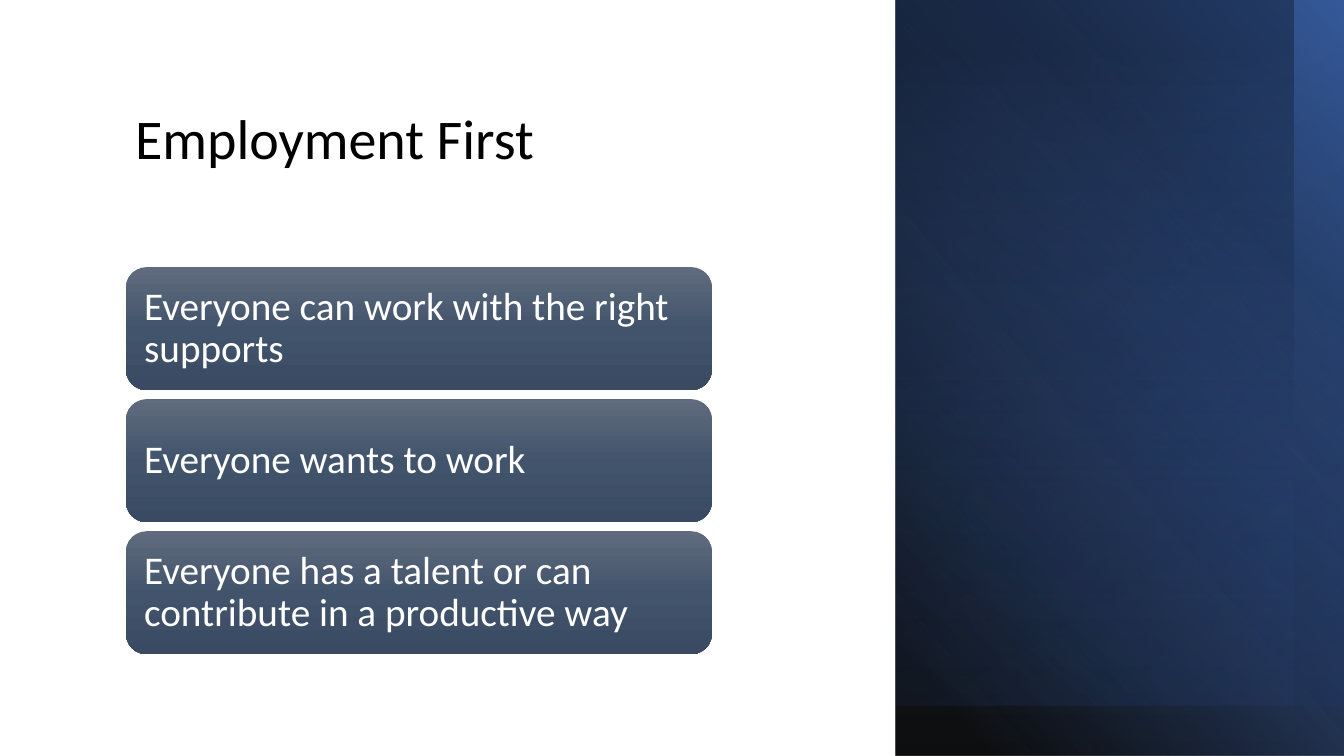
from lxml import etree
from pptx import Presentation
from pptx.dml.color import RGBColor
from pptx.enum import shapes, text
from pptx.oxml.ns import qn
from pptx.util import Inches, Pt

FONT = "Calibri"
PRINCIPLES = [
    "Everyone can work with the right supports",
    "Everyone wants to work",
    "Everyone has a talent or can contribute in a productive way",
]
# Stops are (position %, colour, opacity %)
CARD_STOPS = [(0, "606B7D", 100), (50, "42546C", 100), (100, "394A62", 100)]
# Panel layers are (width, height, clockwise angle, stops), back to front
PANEL_LAYERS = [
    (4.45, 7.5, 40, [(8, "000000", 94), (100, "4472C4", 100)]),
    (4.45, 7, 300, [(31, "203864", 0), (100, "203864", 26)]),
    (4.45, 7, 50, [(0, "4472C4", 0), (72, "000000", 21)]),
    (3.95, 7.5, 90, [(0, "4472C4", 0), (93, "000000", 29)]),
]


def color(value):
    return RGBColor.from_string(value)


def fill_gradient(shape, stops, angle):
    shape.fill.gradient()
    shape.fill.gradient_angle = (360 - angle) % 360
    stop_list = shape._element.spPr.find(qn("a:gradFill")).find(qn("a:gsLst"))
    for stop in list(stop_list):
        stop_list.remove(stop)
    for position, value, opacity in stops:
        stop = etree.SubElement(stop_list, qn("a:gs"), pos=str(position * 1000))
        tint = etree.SubElement(stop, qn("a:srgbClr"), val=value)
        if opacity < 100:
            etree.SubElement(tint, qn("a:alpha"), val=str(opacity * 1000))


def add_gradient_shape(page, kind, left, top, width, height, stops, angle):
    shape = page.shapes.add_shape(
        kind, Inches(left), Inches(top), Inches(width), Inches(height))
    shape.shadow.inherit = False
    shape.line.fill.background()
    fill_gradient(shape, stops, angle)
    return shape


def write_text(frame, content, size, value):
    frame.text = content
    frame.word_wrap = True
    para = frame.paragraphs[0]
    para.alignment = text.PP_ALIGN.LEFT
    para.line_spacing = 0.9
    font = para.runs[0].font
    font.name, font.size, font.color.rgb = FONT, Pt(size), color(value)


def set_title(page, content):
    title = page.shapes.title
    title.left, title.top = Inches(1.24), Inches(0.55)
    title.width, title.height = Inches(5.82), Inches(1.8)
    frame = title.text_frame
    write_text(frame, content, 40, "000000")
    frame.auto_size = text.MSO_AUTO_SIZE.NONE
    frame.vertical_anchor = text.MSO_ANCHOR.BOTTOM
    frame.margin_bottom = Inches(0.65)


def add_panel_layer(page, width, height, angle, stops):
    layer = add_gradient_shape(page, shapes.MSO_SHAPE.RECTANGLE,
                               8.88, 0, width, height, stops, angle)
    # Half a turn plus a mirror flips the gradient top to bottom
    layer.rotation = 180
    layer._element.spPr.find(qn("a:xfrm")).set("flipH", "1")


def add_card(page, top, content):
    card = add_gradient_shape(page, shapes.MSO_SHAPE.ROUNDED_RECTANGLE,
                              1.25, top, 5.81, 1.22, CARD_STOPS, 90)
    frame = card.text_frame
    write_text(frame, content, 28, "FFFFFF")
    frame.vertical_anchor = text.MSO_ANCHOR.MIDDLE
    # The rounded corners already inset the text by 0.06
    frame.margin_left = frame.margin_right = Inches(0.12)
    frame.margin_top = frame.margin_bottom = Inches(0.12)


def main():
    deck = Presentation()
    deck.slide_width, deck.slide_height = Inches(13.33), Inches(7.5)
    page = deck.slides.add_slide(deck.slide_layouts[5])
    set_title(page, "Employment First")

    # Layered colour panel on the right
    for layer in PANEL_LAYERS:
        add_panel_layer(page, *layer)

    # Stacked principles
    for row, principle in enumerate(PRINCIPLES):
        add_card(page, 2.65 + row * 1.31, principle)

    deck.save("out.pptx")


if __name__ == "__main__":
    main()
